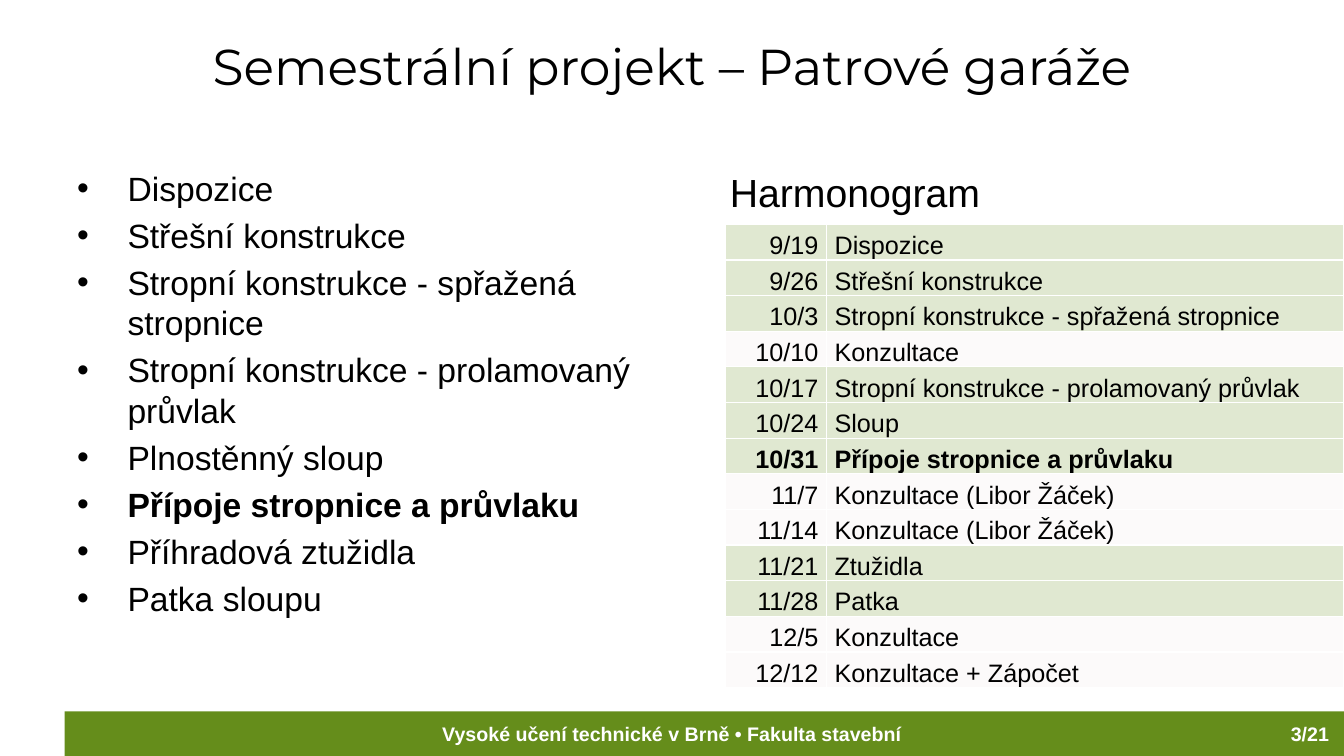
from lxml import etree
from pptx import Presentation
from pptx.dml.color import RGBColor
from pptx.enum.shapes import MSO_SHAPE
from pptx.enum.text import MSO_ANCHOR, PP_ALIGN
from pptx.oxml.ns import qn
from pptx.util import Inches, Pt

RECT = MSO_SHAPE.RECTANGLE
LEFT, CENTER, RIGHT = PP_ALIGN.LEFT, PP_ALIGN.CENTER, PP_ALIGN.RIGHT
TOP, MIDDLE, BOTTOM = MSO_ANCHOR.TOP, MSO_ANCHOR.MIDDLE, MSO_ANCHOR.BOTTOM

COLS, ROWS = 160, 90
GREEN, PINK, BLACK, WHITE = "658D1B", "F4E7E7", "000000", "FFFFFF"
TITLE_FONT, BODY_FONT = "Montserrat", "Arial"
CURRENT = "Přípoje stropnice a průvlaku"

TOPICS = [
    "Dispozice",
    "Střešní konstrukce",
    "Stropní konstrukce - spřažená stropnice",
    "Stropní konstrukce - prolamovaný průvlak",
    "Plnostěnný sloup",
    CURRENT,
    "Příhradová ztužidla",
    "Patka sloupu",
]
SCHEDULE = [
    ("9/19", "Dispozice"),
    ("9/26", "Střešní konstrukce"),
    ("10/3", "Stropní konstrukce - spřažená stropnice"),
    ("10/10", "Konzultace"),
    ("10/17", "Stropní konstrukce - prolamovaný průvlak"),
    ("10/24", "Sloup"),
    ("10/31", CURRENT),
    ("11/7", "Konzultace (Libor Žáček)"),
    ("11/14", "Konzultace (Libor Žáček)"),
    ("11/21", "Ztužidla"),
    ("11/28", "Patka"),
    ("12/5", "Konzultace"),
    ("12/12", "Konzultace + Zápočet"),
]


def rgb(color):
    return RGBColor.from_string(color)


class Deck:
    """Places elements on a slide grid of COLS by ROWS."""

    def __init__(self, prs):
        self.prs = prs
        self.s = prs.slides.add_slide(prs.slide_layouts[5])

    def x(self, cols):
        return round(self.prs.slide_width * cols / COLS)

    def y(self, rows):
        return round(self.prs.slide_height * rows / ROWS)

    def box(self, left, top, width, height):
        return self.x(left), self.y(top), self.x(width), self.y(height)

    def run(self, p, text, size, color=BLACK, bold=False, align=LEFT, font=BODY_FONT):
        p.alignment = align
        r = p.add_run()
        r.text = text
        r.font.name, r.font.size, r.font.bold = font, Pt(size), bold
        r.font.color.rgb = rgb(color)

    def title(self, text, *place):
        sp = self.s.shapes.title
        sp.left, sp.top, sp.width, sp.height = self.box(*place)
        sp.text_frame.vertical_anchor = TOP
        self.run(sp.text_frame.paragraphs[0], text, 36, align=CENTER, font=TITLE_FONT)

    def bar(self, *place):
        sp = self.s.shapes.add_shape(RECT, *self.box(*place))
        sp.shadow.inherit = False
        sp.fill.solid()
        sp.fill.fore_color.rgb = rgb(GREEN)
        sp.line.fill.background()

    def frame(self, place, anchor=TOP):
        tf = self.s.shapes.add_textbox(*self.box(*place)).text_frame
        tf.word_wrap = True
        tf.vertical_anchor = anchor
        return tf

    def text(self, text, size, *place, anchor=TOP, **style):
        self.run(self.frame(place, anchor).paragraphs[0], text, size, **style)

    def bullets(self, items, size, *place):
        tf = self.frame(place)
        for i, item in enumerate(items):
            p = tf.add_paragraph() if i else tf.paragraphs[0]
            pPr = p._p.get_or_add_pPr()
            pPr.set("marL", str(Inches(0.5)))
            pPr.set("indent", str(-Inches(0.5)))
            etree.SubElement(pPr, qn("a:buFont"), typeface=BODY_FONT)
            etree.SubElement(pPr, qn("a:buChar"), char="•")
            if i:
                p.space_before = Pt(size * 0.2)
            self.run(p, item, size, bold=item == CURRENT)

    def cell(self, cell, text, color, **style):
        """Fills a cell with a 20% tint of color and white borders."""
        cell.vertical_anchor = BOTTOM
        cell.margin_left = cell.margin_right = Inches(0.08)
        cell.margin_top, cell.margin_bottom = Inches(0.01), 0
        self.run(cell.text_frame.paragraphs[0], text, 18, **style)
        cell.fill.solid()
        cell.fill.fore_color.rgb = rgb(color)
        tcPr = cell._tc.get_or_add_tcPr()
        etree.SubElement(tcPr.find(".//" + qn("a:srgbClr")), qn("a:alpha"), val="20000")
        for i, side in enumerate(("a:lnL", "a:lnR", "a:lnT", "a:lnB")):
            ln = etree.Element(qn(side), w=str(Pt(1)))
            fill = etree.SubElement(ln, qn("a:solidFill"))
            etree.SubElement(fill, qn("a:srgbClr"), val=WHITE)
            tcPr.insert(i, ln)

    def schedule(self, rows, date_width, *place):
        left, top, width, height = self.box(*place)
        table = self.s.shapes.add_table(len(rows), 2, left, top, width, height).table
        table.first_row = table.horz_banding = False
        table.columns[0].width = self.x(date_width)
        table.columns[1].width = width - self.x(date_width)
        for i, (date, topic) in enumerate(rows):
            table.rows[i].height = height // len(rows)
            color = PINK if topic.startswith("Konzultace") else GREEN
            bold = topic == CURRENT
            self.cell(table.cell(i, 0), date, color, bold=bold, align=RIGHT)
            self.cell(table.cell(i, 1), topic, color, bold=bold)


def main():
    prs = Presentation()
    prs.slide_width, prs.slide_height = Inches(13.33), Inches(7.5)
    deck = Deck(prs)
    footer = dict(color=WHITE, bold=True, anchor=MIDDLE)
    deck.bar(7.7, 84.7, 152.3, 5.3)
    deck.text("Vysoké učení technické v Brně • Fakulta stavební", 14,
              0, 85.3, 160, 4.1, align=CENTER, **footer)
    deck.text("3/21", 14, 143.7, 85.3, 15.7, 4.1, align=RIGHT, **footer)
    deck.title("Semestrální projekt – Patrové garáže", 8, 3.6, 144, 13.1)
    deck.bullets(TOPICS, 24, 8, 19.4, 71, 61)
    deck.text("Harmonogram", 28, 85.7, 19.4, 71, 61)
    deck.schedule(SCHEDULE, 12.1, 86.3, 26.7, 73.7, 55.2)
    prs.save("out.pptx")


if __name__ == "__main__":
    main()
